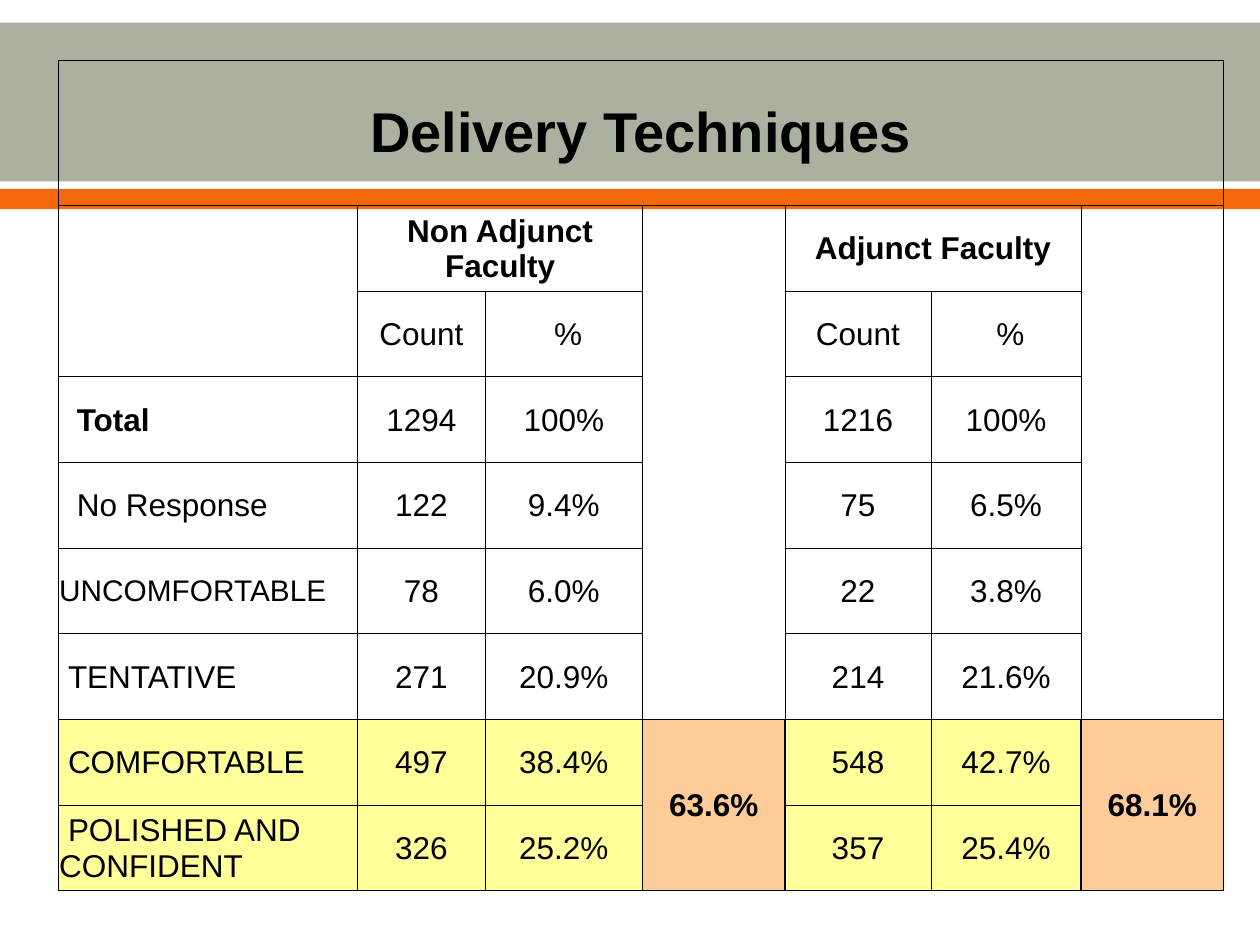
"""Build a slide comparing delivery techniques of adjunct and non adjunct faculty."""
from lxml.etree import SubElement
from pptx import Presentation
from pptx.dml.color import RGBColor
from pptx.enum.shapes import MSO_SHAPE as Shape
from pptx.enum.text import MSO_ANCHOR as Anchor, PP_ALIGN as Align
from pptx.oxml.ns import qn
from pptx.util import Inches, Pt

BLACK = RGBColor(0, 0, 0)
SAGE = RGBColor(0xAB, 0xB1, 0x9F)
ORANGE = RGBColor(0xF4, 0x68, 0x0B)
YELLOW = RGBColor(0xFF, 0xFF, 0x99)
PEACH = RGBColor(0xFF, 0xCC, 0x99)

BANDS = [(0.18, 1.26, SAGE), (1.5, 0.16, ORANGE)]
COLUMN_WIDTHS = [2.38, 1.01, 1.25, 1.13, 1.16, 1.19, 1.13]
ROW_HEIGHTS = [1.15] + [0.68] * 8
ROWS = [
    ["Delivery Techniques", "", "", "", "", "", ""],
    ["", "Non Adjunct Faculty", "", "", "Adjunct Faculty", "", ""],
    ["", "Count", " %", "", "Count", " %", ""],
    ["Total", "1294", "100%", "", "1216", "100%", ""],
    ["No Response", "122", "9.4%", "", "75", "6.5%", ""],
    ["UNCOMFORTABLE", "78", "6.0%", "", "22", "3.8%", ""],
    ["TENTATIVE", "271", "20.9%", "", "214", "21.6%", ""],
    ["COMFORTABLE", "497", "38.4%", "63.6%", "548", "42.7%", "68.1%"],
    ["POLISHED AND CONFIDENT", "326", "25.2%", "", "357", "25.4%", ""],
]
LABEL_INDENTS = {3: 0.14, 4: 0.14, 5: 0, 6: 0.07, 7: 0.07, 8: 0.07}
MERGES = [(0, 0, 0, 6), (1, 1, 1, 2), (1, 4, 1, 5), (7, 3, 8, 3), (7, 6, 8, 6)]
SUMMARY_COLUMNS = (3, 6)
FIRST_SUMMARY_ROW = 7


def write_text(cell, text, size=18, bold=False, align=Align.CENTER, indent=0):
    cell.vertical_anchor = Anchor.MIDDLE
    cell.margin_left = cell.margin_right = cell.margin_top = Inches(0.01)
    cell.margin_bottom = 0
    paragraph = cell.text_frame.paragraphs[0]
    paragraph.alignment = align
    if indent:
        paragraph._p.get_or_add_pPr().set("indent", str(Inches(indent)))
    run = paragraph.add_run()
    run.text = text
    run.font.name = "Arial"
    run.font.size = Pt(size)
    run.font.bold = bold
    run.font.color.rgb = BLACK


def border_widths(row, column):
    widths = dict.fromkeys("LRTB", 0.5)
    if row >= FIRST_SUMMARY_ROW:
        if column in SUMMARY_COLUMNS:
            return dict.fromkeys("LRTB", 1)
        if column + 1 in SUMMARY_COLUMNS:
            widths["R"] = 1
        if column - 1 in SUMMARY_COLUMNS:
            widths["L"] = 1
    elif row and column in SUMMARY_COLUMNS:
        widths["T"] = 0.5 if row == 1 else 0
        widths["B"] = 1 if row == FIRST_SUMMARY_ROW - 1 else 0
    elif column == 0 and row in (1, 2):
        widths["B" if row == 1 else "T"] = 0
    return widths


def draw_borders(cell, widths):
    properties = cell._tc.get_or_add_tcPr()
    for side, width in widths.items():
        line = SubElement(properties, qn(f"a:ln{side}"), w=str(Pt(width)))
        if width:
            fill = SubElement(line, qn("a:solidFill"))
            SubElement(fill, qn("a:srgbClr"), val=str(BLACK))
        else:
            SubElement(line, qn("a:noFill"))


def fill_cell(cell, row, column):
    if row < FIRST_SUMMARY_ROW:
        cell.fill.background()
        return
    cell.fill.solid()
    cell.fill.fore_color.rgb = PEACH if column in SUMMARY_COLUMNS else YELLOW


def add_results_table(slide):
    table = slide.shapes.add_table(
        len(ROWS), len(COLUMN_WIDTHS), Inches(0.46), Inches(0.48),
        Inches(sum(COLUMN_WIDTHS)), Inches(sum(ROW_HEIGHTS))).table
    table.first_row = table.horz_banding = False
    for column, width in zip(table.columns, COLUMN_WIDTHS):
        column.width = Inches(width)
    for row, height in zip(table.rows, ROW_HEIGHTS):
        row.height = Inches(height)
    for top, left, bottom, right in MERGES:
        table.cell(top, left).merge(table.cell(bottom, right))
    for row, texts in enumerate(ROWS):
        for column, text in enumerate(texts):
            cell = table.cell(row, column)
            draw_borders(cell, border_widths(row, column))
            fill_cell(cell, row, column)
            if text:
                is_label = column == 0 and row > 0
                write_text(
                    cell, text,
                    size=32 if row == 0 else 17 if text == "UNCOMFORTABLE" else 18,
                    bold=row < 2 or text == "Total" or column in SUMMARY_COLUMNS,
                    align=Align.LEFT if is_label else Align.CENTER,
                    indent=LABEL_INDENTS[row] if is_label else 0)


def main():
    presentation = Presentation()
    presentation.slide_width, presentation.slide_height = Inches(10), Inches(7.5)
    slide = presentation.slides.add_slide(presentation.slide_layouts[6])
    for top, height, color in BANDS:
        band = slide.shapes.add_shape(
            Shape.RECTANGLE, 0, Inches(top), Inches(10), Inches(height))
        band.shadow.inherit = False
        band.fill.solid()
        band.fill.fore_color.rgb = color
        band.line.fill.background()
    add_results_table(slide)
    presentation.save("out.pptx")


if __name__ == "__main__":
    main()
